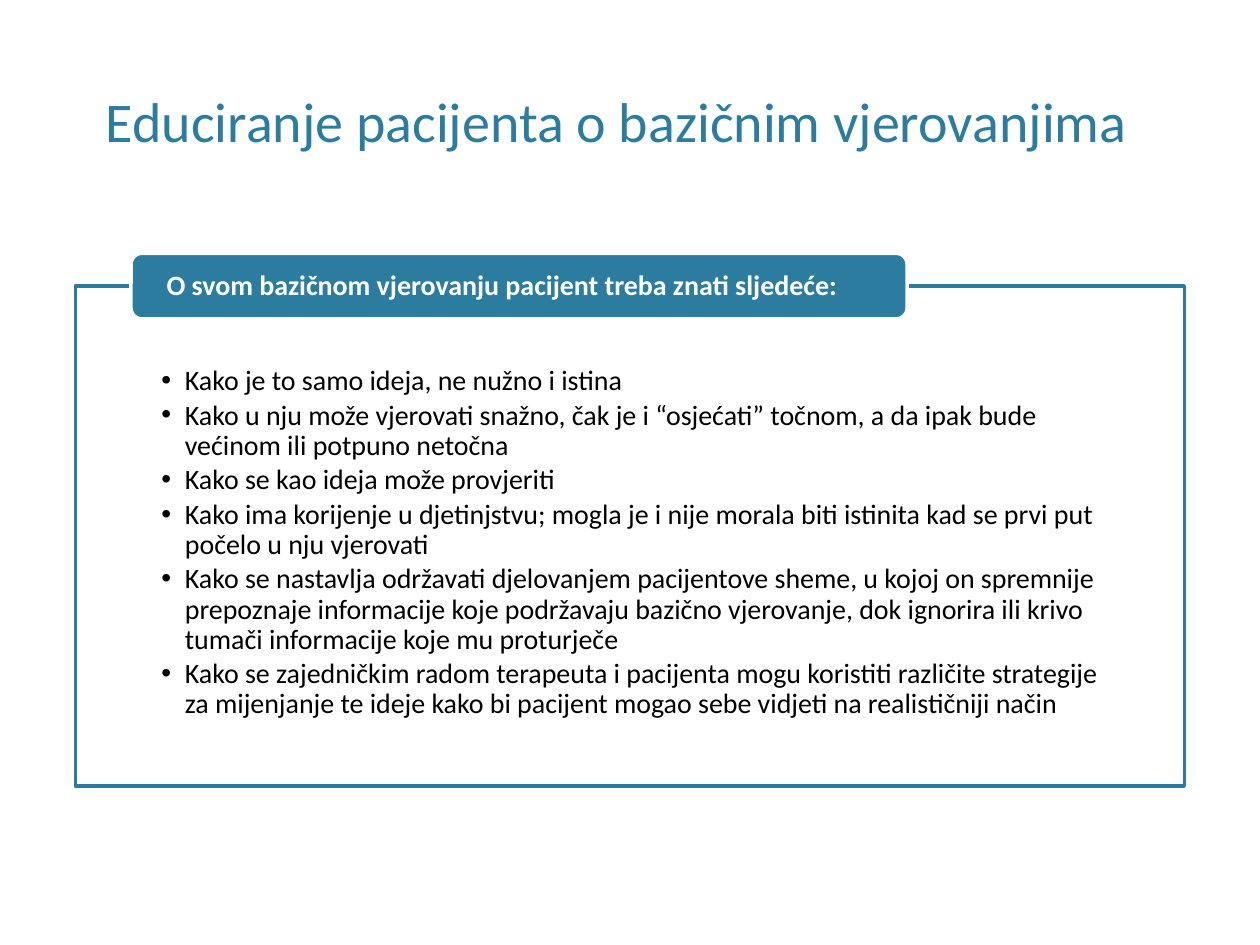
from lxml import etree
from pptx import Presentation
from pptx.dml.color import RGBColor
from pptx.enum.shapes import MSO_SHAPE
from pptx.enum.text import MSO_ANCHOR, PP_ALIGN
from pptx.oxml.ns import qn
from pptx.util import Pt

COLORS = {"teal": "2C7C9F", "white": "FFFFFF", "black": "000000"}
FONT = "Calibri"
TITLE = "Educiranje pacijenta o bazičnim vjerovanjima"
HEADING = "O svom bazičnom vjerovanju pacijent treba znati sljedeće:"
POINTS = [
    "Kako je to samo ideja, ne nužno i istina",
    "Kako u nju može vjerovati snažno, čak je i “osjećati” točnom, a da ipak bude "
    "većinom ili potpuno netočna",
    "Kako se kao ideja može provjeriti",
    "Kako ima korijenje u djetinjstvu; mogla je i nije morala biti istinita kad se "
    "prvi put počelo u nju vjerovati",
    "Kako se nastavlja održavati djelovanjem pacijentove sheme, u kojoj on spremnije "
    "prepoznaje informacije koje podržavaju bazično vjerovanje, dok ignorira ili krivo "
    "tumači informacije koje mu proturječe",
    "Kako se zajedničkim radom terapeuta i pacijenta mogu koristiti različite "
    "strategije za mijenjanje te ideje kako bi pacijent mogao sebe vidjeti na "
    "realističniji način",
]


def color(name):
    return RGBColor.from_string(COLORS[name])


def add_span(para, words, size, ink, bold=False):
    span = para.add_run()
    span.text = words
    span.font.name = FONT
    span.font.size = Pt(size)
    span.font.bold = bold
    span.font.color.rgb = color(ink)


def add_panel(page, kind, box, fill, line):
    panel = page.shapes.add_shape(kind, *map(Pt, box))
    panel.shadow.inherit = False
    panel.fill.solid()
    panel.fill.fore_color.rgb = color(fill)
    panel.line.color.rgb = color(line)
    panel.line.width = Pt(2)
    return panel


def set_frame(shape, anchor, insets):
    frame = shape.text_frame
    frame.word_wrap = True
    frame.vertical_anchor = anchor
    (frame.margin_left, frame.margin_top,
     frame.margin_right, frame.margin_bottom) = map(Pt, insets)
    return frame


def add_bullet(para, indent):
    props = para._p.get_or_add_pPr()
    props.set("marL", str(Pt(indent)))
    props.set("indent", str(-Pt(indent)))
    etree.SubElement(props, qn("a:buFont")).set("typeface", "Arial")
    etree.SubElement(props, qn("a:buChar")).set("char", "•")


def add_title(page, box):
    title = page.shapes.add_textbox(*map(Pt, box))
    frame = set_frame(title, MSO_ANCHOR.BOTTOM, (7.2, 3.6, 7.2, 3.6))
    para = frame.paragraphs[0]
    para.alignment = PP_ALIGN.CENTER
    add_span(para, TITLE, 32, "teal")


def add_points(page, box):
    """Outlined panel with bullets and a heading tab across its top edge."""
    left, top, width, height = box
    panel = add_panel(page, MSO_SHAPE.RECTANGLE, box, "white", "teal")
    frame = set_frame(panel, MSO_ANCHOR.TOP, (49, 46, 49, 8.5))
    for index, words in enumerate(POINTS):
        para = frame.paragraphs[0] if index == 0 else frame.add_paragraph()
        para.alignment = PP_ALIGN.LEFT
        para.line_spacing = 0.9
        para.space_after = Pt(2.4)
        add_bullet(para, 13.5)
        add_span(para, words, 16, "black")

    tab_height = 37.5
    tab_box = (left + width * 0.05, top - tab_height / 2, width * 0.7, tab_height)
    tab = add_panel(page, MSO_SHAPE.ROUNDED_RECTANGLE, tab_box, "teal", "white")
    para = set_frame(tab, MSO_ANCHOR.MIDDLE, (18.5, 0, 18.5, 0)).paragraphs[0]
    para.alignment = PP_ALIGN.LEFT
    para.line_spacing = 0.9
    add_span(para, HEADING, 16, "white", bold=True)


def main():
    deck = Presentation()
    deck.slide_width, deck.slide_height = Pt(720), Pt(540)
    page = deck.slides.add_slide(deck.slide_layouts[6])
    add_title(page, (34, 39.5, 637, 52))
    add_points(page, (43.2, 163.5, 633.6, 285.8))
    deck.save("out.pptx")


if __name__ == "__main__":
    main()
